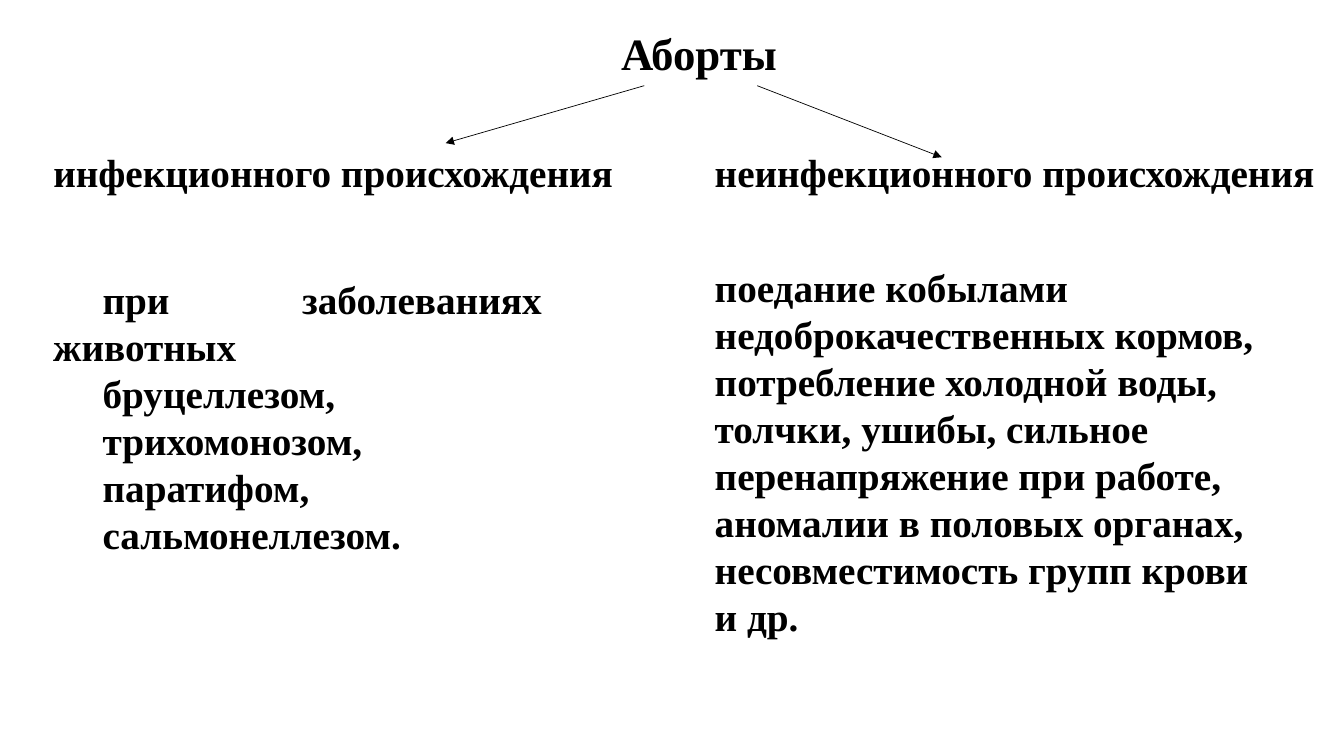
from lxml import etree
from pptx import Presentation
from pptx.dml.color import RGBColor
from pptx.enum.shapes import MSO_CONNECTOR
from pptx.enum.text import MSO_ANCHOR, MSO_AUTO_SIZE, PP_ALIGN
from pptx.oxml.ns import qn
from pptx.util import Pt

LEFT, JUST = PP_ALIGN.LEFT, PP_ALIGN.JUSTIFY
TOP, GROW = MSO_ANCHOR.TOP, MSO_AUTO_SIZE.SHAPE_TO_FIT_TEXT
LINE = MSO_CONNECTOR.STRAIGHT

# Content: boxes are left, top, width, height in px
COLORS = {"ink": "000000", "page": "FFFFFF"}
FONT = "Times New Roman"
TITLE = ("Аборты", (606, 21, 186, 64))
HEADS = [
    ("инфекционного происхождения", (43, 142, 581, 57)),
    ("неинфекционного происхождения", (699, 142, 621, 57)),
]
ILLS = ["при заболеваниях животных", "бруцеллезом,", "трихомонозом,",
        "паратифом,", "сальмонеллезом."]
CAUSES = ["поедание кобылами недоброкачественных кормов, потребление "
          "холодной воды, толчки, ушибы, сильное перенапряжение при работе, "
          "аномалии в половых органах, несовместимость групп крови и др."]
ARROWS = [(639, 85, 442, 142), (751, 85, 934, 156)]

SCALE = 9144  # EMU in one px, 100 px to the inch


def px(n):
    return n * SCALE


def color(name):
    return RGBColor.from_string(COLORS[name])


def put(lines, box, shape=None, size=28, align=LEFT, indent=0, wrap=True):
    area = [px(n) for n in box]
    if shape is None:
        shape = slide.shapes.add_textbox(*area)
    shape.left, shape.top, shape.width, shape.height = area
    frame = shape.text_frame
    frame.word_wrap = wrap
    frame.auto_size = GROW
    frame.vertical_anchor = TOP
    frame.text = "\n".join(lines)
    for para in frame.paragraphs:
        para.alignment = align
        if indent:
            para._p.get_or_add_pPr().set("indent", str(px(indent)))
        font = para.runs[0].font
        font.name, font.size, font.bold = FONT, Pt(size), True
        font.color.rgb = color("ink")


def arrow(ends):
    link = slide.shapes.add_connector(LINE, *[px(n) for n in ends])
    link.line.width = Pt(0.5)
    link.line.color.rgb = color("ink")
    tip = etree.SubElement(link.line._get_or_add_ln(), qn("a:tailEnd"))
    tip.set("type", "triangle")
    etree.SubElement(link._element.spPr, qn("a:effectLst"))


# Slide
deck = Presentation()
deck.slide_width, deck.slide_height = px(1333), px(750)
slide = deck.slides.add_slide(deck.slide_layouts[5])
slide.background.fill.solid()
slide.background.fill.fore_color.rgb = color("page")

# Title and the two branches
put([TITLE[0]], TITLE[1], shape=slide.shapes.title, size=32)
for text, box in HEADS:
    put([text], box, wrap=False)
for ends in ARROWS:
    arrow(ends)

# Details under each branch
put(ILLS, (43, 268, 504, 293), align=JUST, indent=49)
put(CAUSES, (699, 256, 579, 387))

deck.save("out.pptx")
